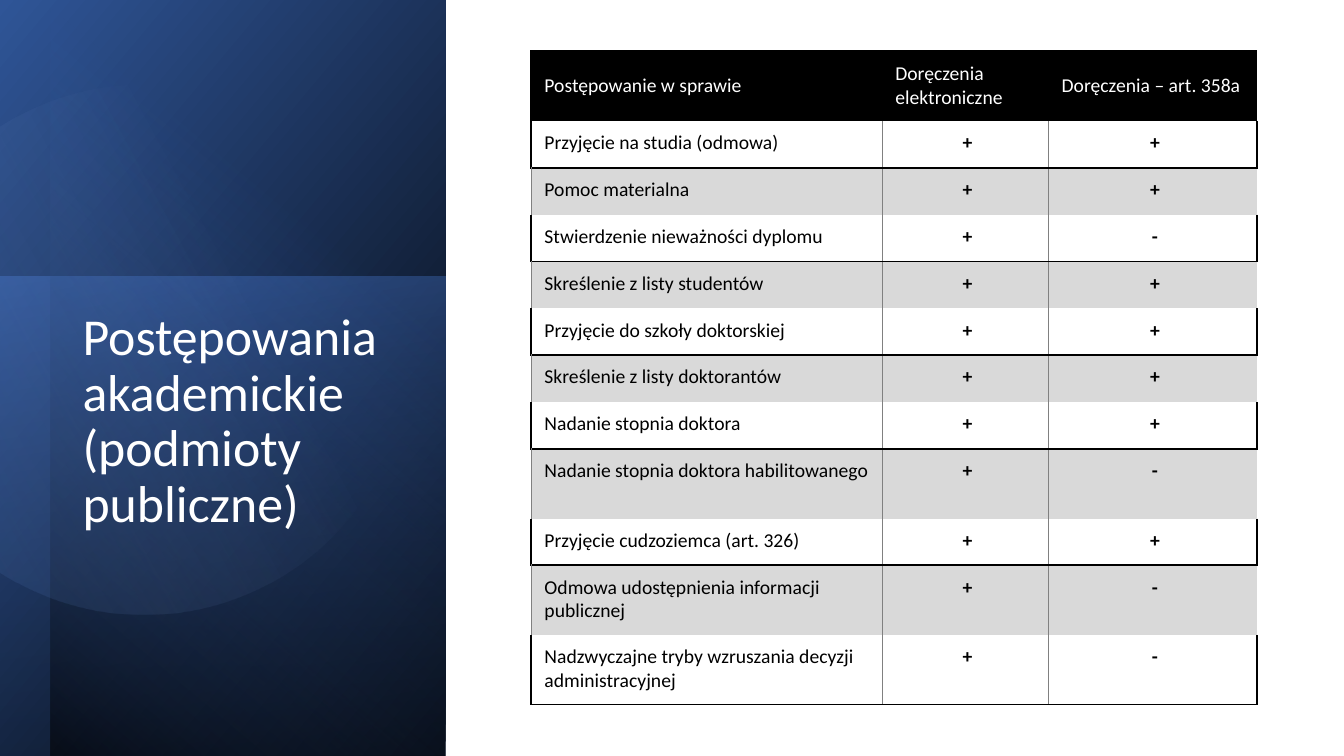
from math import acos, cos, degrees, radians, sin

from lxml import etree
from pptx import Presentation
from pptx.dml.color import RGBColor
from pptx.enum.shapes import MSO_SHAPE as Preset
from pptx.enum.text import MSO_ANCHOR as Anchor, PP_ALIGN as Align
from pptx.oxml.ns import qn
from pptx.util import Inches, Pt

FONT = "Calibri"
COLORS = {
    "black": "000000", "white": "FFFFFF", "band": "D9D9D9", "grid": "808080",
    "blue": "4472C4", "deep": "2F5597", "navy": "203864", "pale": "8FAADC",
}

TITLE = "Postępowania akademickie (podmioty publiczne)"
HEADER = ("Postępowanie w sprawie", "Doręczenia elektroniczne", "Doręczenia – art. 358a")
PROCEEDINGS = [
    ("Przyjęcie na studia (odmowa)", "+", "+"),
    ("Pomoc materialna", "+", "+"),
    ("Stwierdzenie nieważności dyplomu", "+", "-"),
    ("Skreślenie z listy studentów", "+", "+"),
    ("Przyjęcie do szkoły doktorskiej", "+", "+"),
    ("Skreślenie z listy doktorantów", "+", "+"),
    ("Nadanie stopnia doktora", "+", "+"),
    ("Nadanie stopnia doktora habilitowanego", "+", "-"),
    ("Przyjęcie cudzoziemca (art. 326)", "+", "+"),
    ("Odmowa udostępnienia informacji publicznej", "+", "-"),
    ("Nadzwyczajne tryby wzruszania decyzji administracyjnej", "+", "-"),
]
TALL_ROWS = {0, 8, 10, 11}
TALL_HEIGHT = 0.69
TABLE_BOX = (5.27, 0.51, 7.2, 6.48)
COLUMN_WIDTHS = (3.48, 1.65, 2.07)

# box, rotation, mirrored, gradient stops (position, color, opacity), gradient angle
PANELS = [
    ((-1.55, 1.55, 7.52, 4.42), 90, True,
     [(0, "black", 100), (100, "deep", 100)], 310),
    ((-0.17, 2.91, 4.76, 4.42), 270, False,
     [(0, "blue", 50), (100, "navy", 0)], 190),
    ((-1.29, 1.79, 7.5, 3.92), 270, True,
     [(0, "black", 59), (69, "blue", 0)], 220),
]
DISC_CENTER = (1.81, 3.94)
DISC_RADIUS = 2.63
DISC_CUT = 1.43  # distance from the centre to the straight edge
DISC_ROTATION = 101.6
DISC_STOPS = [(39, "pale", 0), (100, "deep", 26)]
DISC_ANGLE = 310
DISC_SEGMENTS = 120


def rgb(name):
    return RGBColor.from_string(COLORS[name])


def paint_gradient(shape, stops, angle):
    shape.shadow.inherit = False
    shape.line.fill.background()
    shape.fill.gradient()
    shape.fill.gradient_angle = angle
    for stop, (position, color, _) in zip(shape.fill.gradient_stops, stops):
        stop.position = position / 100
        stop.color.rgb = rgb(color)
    gradient_colors = shape.element.spPr.iter(qn("a:srgbClr"))
    for element, (_, _, opacity) in zip(gradient_colors, stops):
        if opacity < 100:
            etree.SubElement(element, qn("a:alpha"), val=str(opacity * 1000))


def add_panels(slide):
    for box, rotation, mirrored, stops, angle in PANELS:
        panel = slide.shapes.add_shape(Preset.RECTANGLE, *map(Inches, box))
        panel.rotation = rotation
        if mirrored:
            panel.element.spPr.xfrm.set("flipH", "1")
        paint_gradient(panel, stops, angle)


def add_disc(slide):
    """Add the disc whose left side is cut off at the slide edge."""
    half_sweep = degrees(acos(-DISC_CUT / DISC_RADIUS))
    points = []
    for step in range(DISC_SEGMENTS + 1):
        turn = half_sweep * (2 * step / DISC_SEGMENTS - 1) - DISC_ROTATION
        points.append((Inches(DISC_CENTER[0] + DISC_RADIUS * cos(radians(turn))),
                       Inches(DISC_CENTER[1] + DISC_RADIUS * sin(radians(turn)))))
    builder = slide.shapes.build_freeform(*points[0])
    builder.add_line_segments(points[1:], close=True)
    disc = builder.convert_to_shape()
    disc.rotation = DISC_ROTATION
    paint_gradient(disc, DISC_STOPS, DISC_ANGLE)


def add_title(slide):
    frame = slide.shapes.add_textbox(*map(Inches, (0.72, 3.03, 3.15, 3.36))).text_frame
    frame.word_wrap = True
    paragraph = frame.paragraphs[0]
    paragraph.text = TITLE
    paragraph.line_spacing = 0.9
    style_font(paragraph.font, 37, "white")


def style_font(font, size, color, bold=False):
    font.name, font.size, font.bold = FONT, Pt(size), bold
    font.color.rgb = rgb(color)


def cell_borders(row, column):
    """Return the border kind of the left, right, top and bottom sides."""
    last = column == len(HEADER) - 1
    if row == 0:
        return "heavy", None if last else "heavy", "heavy", None
    if row % 2:
        return ("thin" if column else "heavy", "heavy" if last else "thin",
                None, "heavy")
    return "thin", None if last else "thin", "heavy", None


def draw_borders(cell, kinds):
    properties = cell._tc.get_or_add_tcPr()
    for index, (side, kind) in enumerate(zip("LRTB", kinds)):
        line = etree.Element(qn(f"a:ln{side}"))
        if kind:
            width, color = (1.5, "black") if kind == "heavy" else (0.5, "grid")
            line.set("w", str(Pt(width)))
            fill = etree.SubElement(line, qn("a:solidFill"))
            etree.SubElement(fill, qn("a:srgbClr"), val=COLORS[color])
        else:
            etree.SubElement(line, qn("a:noFill"))
        properties.insert(index, line)


def fill_cell(cell, row, column, text):
    cell.margin_left, cell.margin_right = Inches(0.13), Inches(0.09)
    cell.margin_top = cell.margin_bottom = Inches(0.1)
    cell.vertical_anchor = Anchor.TOP if row else Anchor.MIDDLE
    if row % 2:
        cell.fill.background()
    else:
        cell.fill.solid()
        cell.fill.fore_color.rgb = rgb("band" if row else "black")
    paragraph = cell.text_frame.paragraphs[0]
    paragraph.text = text
    is_mark = row > 0 and column > 0
    paragraph.alignment = Align.CENTER if is_mark else Align.LEFT
    style_font(paragraph.font, 14, "black" if row else "white", is_mark)
    draw_borders(cell, cell_borders(row, column))


def add_proceedings_table(slide):
    rows = [HEADER, *PROCEEDINGS]
    table = slide.shapes.add_table(
        len(rows), len(HEADER), *map(Inches, TABLE_BOX)).table
    table.first_row = table.horz_banding = False
    for column, width in zip(table.columns, COLUMN_WIDTHS):
        column.width = Inches(width)
    tall_count = len(TALL_ROWS)
    short_height = (TABLE_BOX[3] - tall_count * TALL_HEIGHT) / (len(rows) - tall_count)
    for row, texts in enumerate(rows):
        table.rows[row].height = Inches(TALL_HEIGHT if row in TALL_ROWS else short_height)
        for column, text in enumerate(texts):
            fill_cell(table.cell(row, column), row, column, text)


def main():
    presentation = Presentation()
    presentation.slide_width, presentation.slide_height = Inches(13.33), Inches(7.5)
    slide = presentation.slides.add_slide(presentation.slide_layouts[6])
    add_panels(slide)
    add_disc(slide)
    add_title(slide)
    add_proceedings_table(slide)
    presentation.save("out.pptx")


if __name__ == "__main__":
    main()
